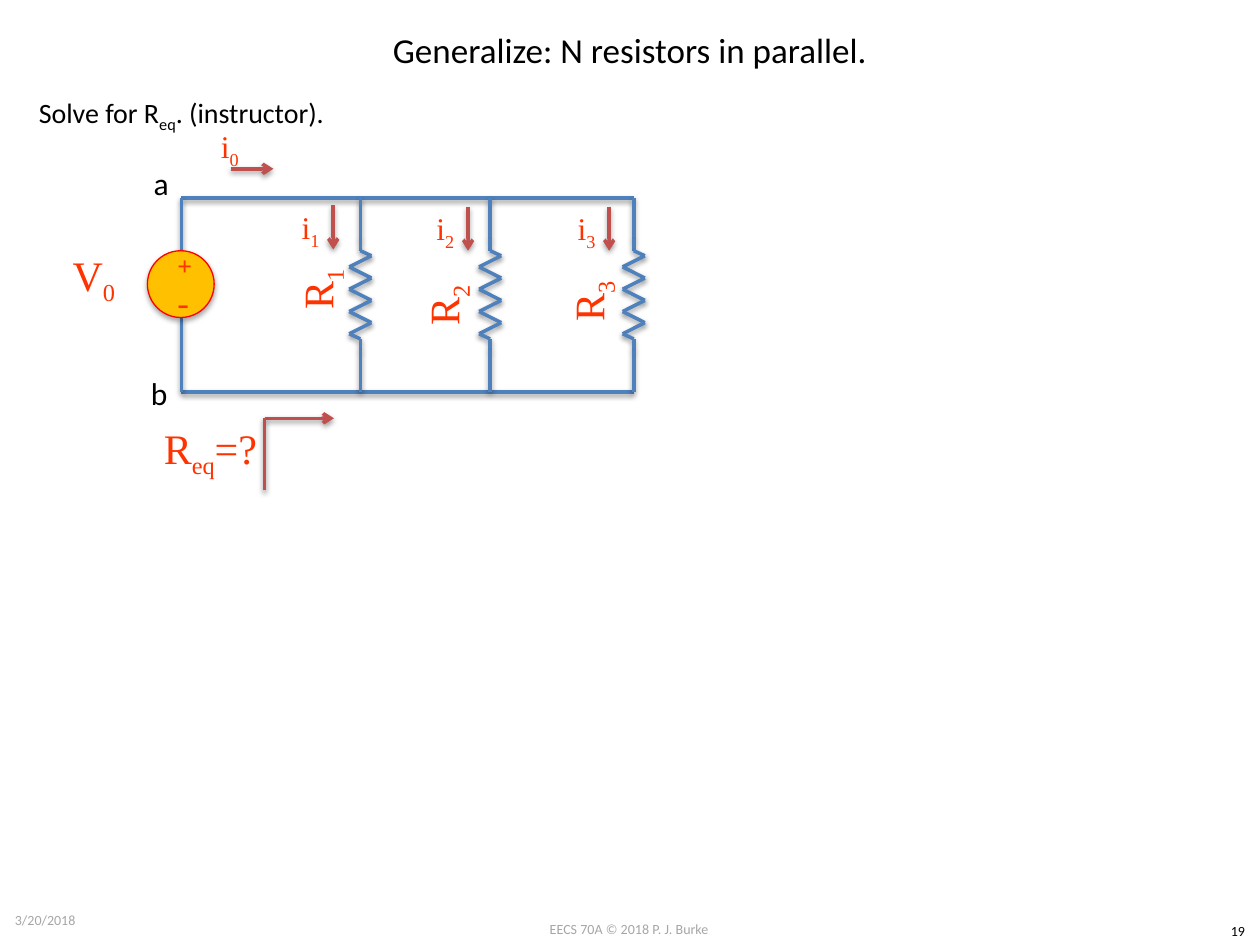
"""Draw a slide on N resistors in parallel."""
from dataclasses import dataclass
from itertools import pairwise

from lxml.etree import SubElement as Sub
from pptx import Presentation
from pptx.dml.color import RGBColor
from pptx.enum.shapes import MSO_CONNECTOR as Wire, MSO_SHAPE as Form
from pptx.enum.text import MSO_ANCHOR as Anchor, PP_ALIGN as Align
from pptx.oxml.ns import qn
from pptx.util import Emu, Inches, Pt

COLS, ROWS = 100, 75
WIDE, HIGH = Inches(10), Inches(7.5)
BLUE, RED, INK, BLACK, GRAY = "4F81BD", "C0504D", "FF3300", "000000", "A6A6A6"
SANS, SERIF = "Calibri", "Times New Roman"
TOP, BASE, LEFT, LAST = 15.7, 31.1, 14.4, 50.3
HALF, STEP = 0.88, 0.885


@dataclass
class Label:
    """Text in a grid box, with subscripts set between underscores."""
    text: str
    col: float
    row: float
    wide: float
    high: float
    size: float = 24
    font: str = SERIF
    color: str = INK
    align: Align = Align.CENTER
    anchor: Anchor = Anchor.MIDDLE
    turn: float = 0
    bold: bool = False
    wrap: bool = True


@dataclass
class Branch:
    """One resistor branch with the corners of its two labels."""
    num: int
    col: float
    amp: tuple[float, float]
    ohm: tuple[float, float]


def across(col: float) -> Emu:
    """Turn grid columns into a length."""
    return Emu(round(WIDE * col / COLS))


def down(row: float) -> Emu:
    """Turn grid rows into a length."""
    return Emu(round(HIGH * row / ROWS))


def tint(code: str) -> RGBColor:
    """Turn a hex string into a colour."""
    return RGBColor.from_string(code)


def shade(shape, alpha: int, dist: float) -> None:
    """Give a shape a soft shadow below it."""
    fx = Sub(shape._element.spPr, qn("a:effectLst"))
    drop = Sub(fx, qn("a:outerShdw"), blurRad=str(Pt(3.1)), dist=str(Pt(dist)),
               dir="5400000", rotWithShape="0")
    ink = Sub(drop, qn("a:srgbClr"), val=BLACK)
    Sub(ink, qn("a:alpha"), val=str(alpha * 1000))


def link(shapes, start: tuple, end: tuple, color: str = BLUE, arrow: bool = False) -> None:
    """Draw a line between two grid points."""
    line = shapes.add_connector(Wire.STRAIGHT, across(start[0]), down(start[1]),
                                across(end[0]), down(end[1]))
    line.line.color.rgb = tint(color)
    line.line.width = Pt(2)
    if arrow:
        Sub(line.line._get_or_add_ln(), qn("a:tailEnd"), type="arrow")
    shade(line, 38, 1.6)


def chain(shapes, points: list) -> None:
    """Join grid points with lines in one group."""
    group = shapes.add_group_shape().shapes
    for start, end in pairwise(points):
        link(group, start, end)


def place(shape, item: Label) -> None:
    """Set the position and the text of a shape."""
    shape.left, shape.top = across(item.col), down(item.row)
    shape.width, shape.height = across(item.wide), down(item.high)
    shape.rotation = item.turn
    frame = shape.text_frame
    frame.word_wrap, frame.vertical_anchor = item.wrap, item.anchor
    para = frame.paragraphs[0]
    para.alignment = item.align
    for nth, part in enumerate(item.text.split("_")):
        if not part:
            continue
        run = para.add_run()
        run.text = part
        font = run.font
        font.name, font.size, font.bold = item.font, Pt(item.size), item.bold
        font.color.rgb = tint(item.color)
        if nth % 2:
            font._element.set("baseline", "-25000")


def write(shapes, item: Label) -> None:
    """Add a text box for a label."""
    place(shapes.add_textbox(0, 0, 0, 0), item)


def zigzag(col: float) -> list:
    """List the points of a resistor and its leads from top to base."""
    teeth = [(col + HALF * (-1) ** n, 20.3 + STEP * n) for n in range(8)]
    return [(col, TOP), (col, 19), (col, 19.9), *teeth,
            (col, 26.9), (col, 27.8), (col, BASE)]


def draw(shapes, item: Branch) -> None:
    """Draw a branch with its current arrow and labels."""
    chain(shapes, zigzag(item.col))
    col, row = item.amp
    tip = col + 6.45
    link(shapes, (tip, row + 0.7), (tip, row + 4.2), RED, True)
    write(shapes, Label(f"i_{item.num}_", col, row, 9.3, 5.2, 18))
    write(shapes, Label(f"R_{item.num}_", *item.ohm, 10, 5.2, turn=270))


def source(shapes) -> None:
    """Draw the voltage source."""
    disc = shapes.add_shape(Form.OVAL, across(11.7), down(19.9), across(5.3), down(5.3))
    disc.fill.solid()
    disc.fill.fore_color.rgb = tint("FFC000")
    disc.line.color.rgb = tint("FF0000")
    disc.line.width = Pt(0.75)
    shade(disc, 35, 1.8)


BRANCHES = [
    Branch(1, 28.6, (20, 15.6), (20.4, 20.4)),
    Branch(2, 38.9, (30.7, 15.7), (30.4, 21.6)),
    Branch(3, 50.3, (41.9, 15.7), (41.9, 21.3)),
]
TITLE = Label("Generalize: N resistors in parallel.", 5, 0, 90, 7.8, 20, SANS, BLACK)
PLAIN = dict(font=SANS, color=BLACK, align=Align.LEFT, anchor=Anchor.TOP, wrap=False)
LABELS = [
    Label("Solve for R_eq_. (instructor).", 2.1, 7.1, 25.9, 3.7, 16, **PLAIN),
    Label("a", 11.2, 12.5, 3.2, 4, 18, **PLAIN),
    Label("b", 11, 29.2, 3.4, 4, 18, **PLAIN),
    Label("+", 13.1, 19.4, 2.6, 3.3, 14.8, bold=True),
    Label("-", 13.1, 22.3, 2.6, 3.3, 20),
    Label("i_0_", 13.6, 9.2, 9.3, 5.2, 18),
    Label("R_eq_=?", 11.7, 33.2, 10, 5.2),
    Label("V_0_", 3.1, 19.6, 8.7, 4.9),
    Label("3/20/2018", 0.2, 71, 23.3, 4, 8, SANS, GRAY, Align.LEFT),
    Label("EECS 70A © 2018 P. J. Burke", 38.3, 72.6, 23.3, 2.4, 8, SANS, GRAY,
          anchor=Anchor.TOP),
    Label("19", 96.5, 72.7, 3.5, 2.4, 8, SANS, BLACK, anchor=Anchor.TOP),
]
WIRES = [
    ((LAST, TOP), (LEFT, TOP)),
    ((LAST, BASE), (LEFT, BASE)),
    ((LEFT, 19.9), (LEFT, TOP)),
    ((LEFT, BASE), (LEFT, 25.2)),
]


def main() -> None:
    """Build and save the slide."""
    deck = Presentation()
    deck.slide_width, deck.slide_height = WIDE, HIGH
    slide = deck.slides.add_slide(deck.slide_layouts[5])
    shapes = slide.shapes
    place(shapes.title, TITLE)
    for start, end in WIRES:
        link(shapes, start, end)
    for item in BRANCHES:
        draw(shapes, item)
    source(shapes)
    link(shapes, (18.3, 13.4), (21.7, 13.4), RED, True)
    probe = shapes.add_group_shape().shapes
    link(probe, (21, 33.2), (26.5, 33.2), RED, True)
    link(probe, (21, 38.9), (21, 33.2), RED)
    for item in LABELS:
        write(shapes, item)
    deck.save("out.pptx")


if __name__ == "__main__":
    main()
